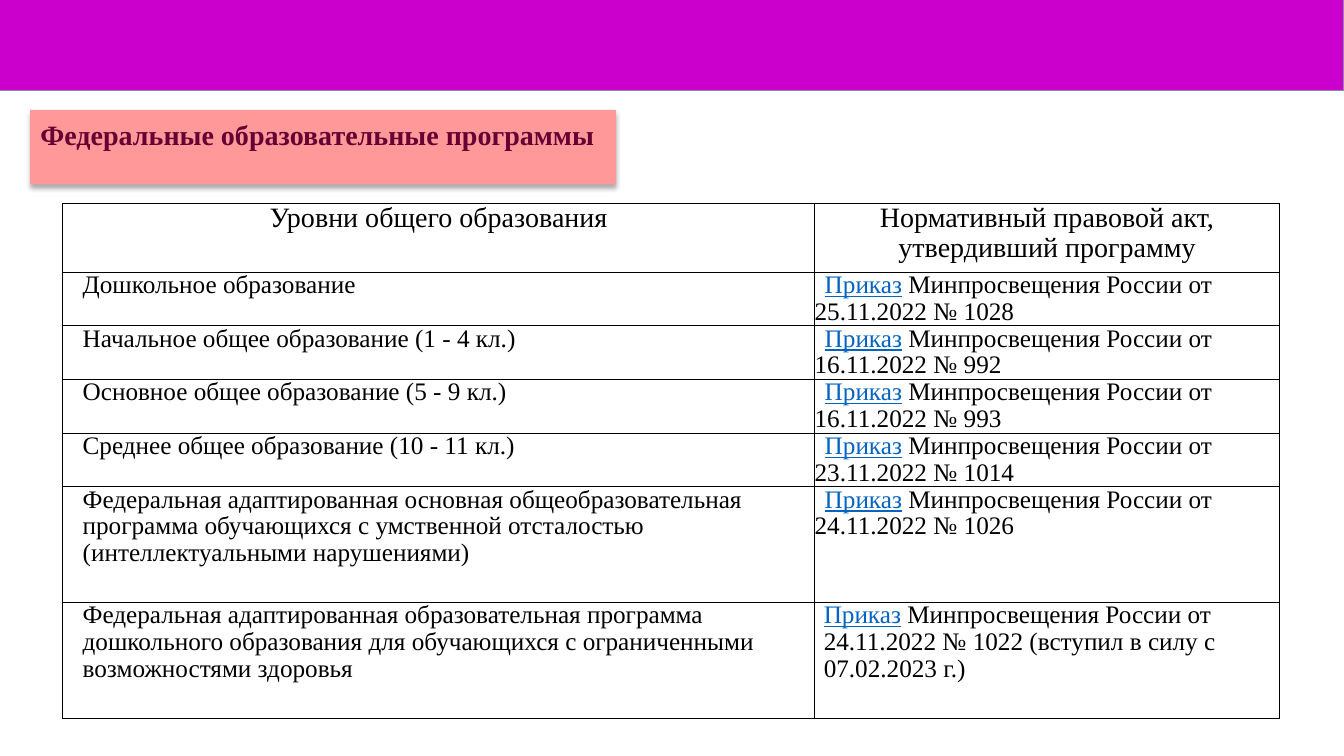
import pptx
import pptx.util
import pptx.dml.color
import pptx.enum.shapes
import pptx.enum.text
import pptx.oxml
from pptx.oxml.ns import nsdecls
from pptx.util import Inches

FONT = "Times New Roman"
HEADING = "Федеральные образовательные программы"
COLUMN_TITLES = (
    "Уровни общего образования",
    "Нормативный правовой акт, утвердивший программу",
)
ORDER = "Приказ"
ISSUER = " Минпросвещения России от "
PROGRAMMES = [
    ("Дошкольное образование", "25.11.2022 № 1028"),
    ("Начальное общее образование (1 - 4 кл.)", "16.11.2022 № 992"),
    ("Основное общее образование (5 - 9 кл.)", "16.11.2022 № 993"),
    ("Среднее общее образование (10 - 11 кл.)", "23.11.2022 № 1014"),
    ("Федеральная адаптированная основная общеобразовательная программа обучающихся "
     "с умственной отсталостью (интеллектуальными нарушениями)", "24.11.2022 № 1026"),
    ("Федеральная адаптированная образовательная программа дошкольного образования "
     "для обучающихся с ограниченными возможностями здоровья",
     "24.11.2022 № 1022 (вступил в силу с 07.02.2023 г.)"),
]
COLUMN_WIDTHS = (7.46, 4.61)
ROW_HEIGHTS = [0.68] + [0.52] * 4 + [1.15] * 2


def rgb(value):
    return pptx.dml.color.RGBColor.from_string(value)


def style(run, size, color="000000", bold=False, underline=False):
    run.font.name = FONT
    run.font.size = pptx.util.Pt(size)
    run.font.color.rgb = rgb(color)
    run.font.bold = bold
    run.font.underline = underline


def format_cell(cell):
    cell.fill.background()
    cell.margin_left = cell.margin_right = cell.margin_top = cell.margin_bottom = 0
    properties = cell._tc.get_or_add_tcPr()
    for position, side in enumerate(("lnL", "lnR", "lnT", "lnB")):
        properties.insert(position, pptx.oxml.parse_xml(
            f'<a:{side} {nsdecls("a")} w="9525"><a:solidFill>'
            f'<a:srgbClr val="000000"/></a:solidFill></a:{side}>'))


def write_cell(cell, parts, size, left=0, first_line=0, centred=False):
    format_cell(cell)
    paragraph = cell.text_frame.paragraphs[0]
    paragraph.line_spacing = 0.96
    if centred:
        paragraph.alignment = pptx.enum.text.PP_ALIGN.CENTER
    indents = paragraph._p.get_or_add_pPr()
    indents.set("marL", str(Inches(left)))
    indents.set("indent", str(Inches(first_line)))
    for text, color, underline in parts:
        run = paragraph.add_run()
        run.text = text
        style(run, size, color, underline=underline)


def add_banner(slide):
    banner = slide.shapes.add_shape(
        pptx.enum.shapes.MSO_SHAPE.RECTANGLE, 0, 0, Inches(13.33), Inches(0.9))
    banner.shadow.inherit = False
    banner.fill.solid()
    banner.fill.fore_color.rgb = rgb("CC00CC")
    banner.line.color.rgb = rgb("8E87A3")
    banner.line.width = pptx.util.Pt(0.75)


def add_heading(slide):
    heading = slide.shapes.title
    heading.left, heading.top = Inches(0.3), Inches(1.09)
    heading.width, heading.height = Inches(5.81), Inches(0.74)
    heading.fill.solid()
    heading.fill.fore_color.rgb = rgb("FF9999")
    heading._element.spPr.append(pptx.oxml.parse_xml(
        f'<a:effectLst {nsdecls("a")}><a:outerShdw blurRad="44450" dist="27940" '
        'dir="5400000" algn="ctr"><a:srgbClr val="000000"><a:alpha val="32000"/>'
        '</a:srgbClr></a:outerShdw></a:effectLst>'))
    frame = heading.text_frame
    frame.text = HEADING
    frame.word_wrap = False
    frame.auto_size = pptx.enum.text.MSO_AUTO_SIZE.NONE
    frame.vertical_anchor = pptx.enum.text.MSO_ANCHOR.TOP
    frame.margin_left, frame.margin_top = Inches(0.1), Inches(0.08)
    frame.paragraphs[0].alignment = pptx.enum.text.PP_ALIGN.LEFT
    style(frame.paragraphs[0].runs[0], 20, "660033", bold=True)


def add_programmes(slide):
    table = slide.shapes.add_table(
        len(ROW_HEIGHTS), len(COLUMN_WIDTHS), Inches(0.62), Inches(2.02),
        Inches(sum(COLUMN_WIDTHS)), Inches(sum(ROW_HEIGHTS))).table
    table.first_row = table.horz_banding = False
    for column, width in zip(table.columns, COLUMN_WIDTHS):
        column.width = Inches(width)
    for row, height in zip(table.rows, ROW_HEIGHTS):
        row.height = Inches(height)
    for column, title in enumerate(COLUMN_TITLES):
        write_cell(table.cell(0, column), [(title, "000000", False)], 20, centred=True)
    for row, (level, act) in enumerate(PROGRAMMES, start=1):
        write_cell(table.cell(row, 0), [(level, "000000", False)], 18, left=0.2)
        left, first_line = (0.09, 0) if row == len(PROGRAMMES) else (0, 0.1)
        order = [(ORDER, "0563C1", True), (ISSUER + act, "000000", False)]
        write_cell(table.cell(row, 1), order, 18, left, first_line)


def main():
    presentation = pptx.Presentation()
    presentation.slide_width = Inches(13.33)
    presentation.slide_height = Inches(7.5)
    slide = presentation.slides.add_slide(presentation.slide_layouts[5])
    add_banner(slide)
    add_programmes(slide)
    add_heading(slide)
    presentation.save("out.pptx")


if __name__ == "__main__":
    main()
